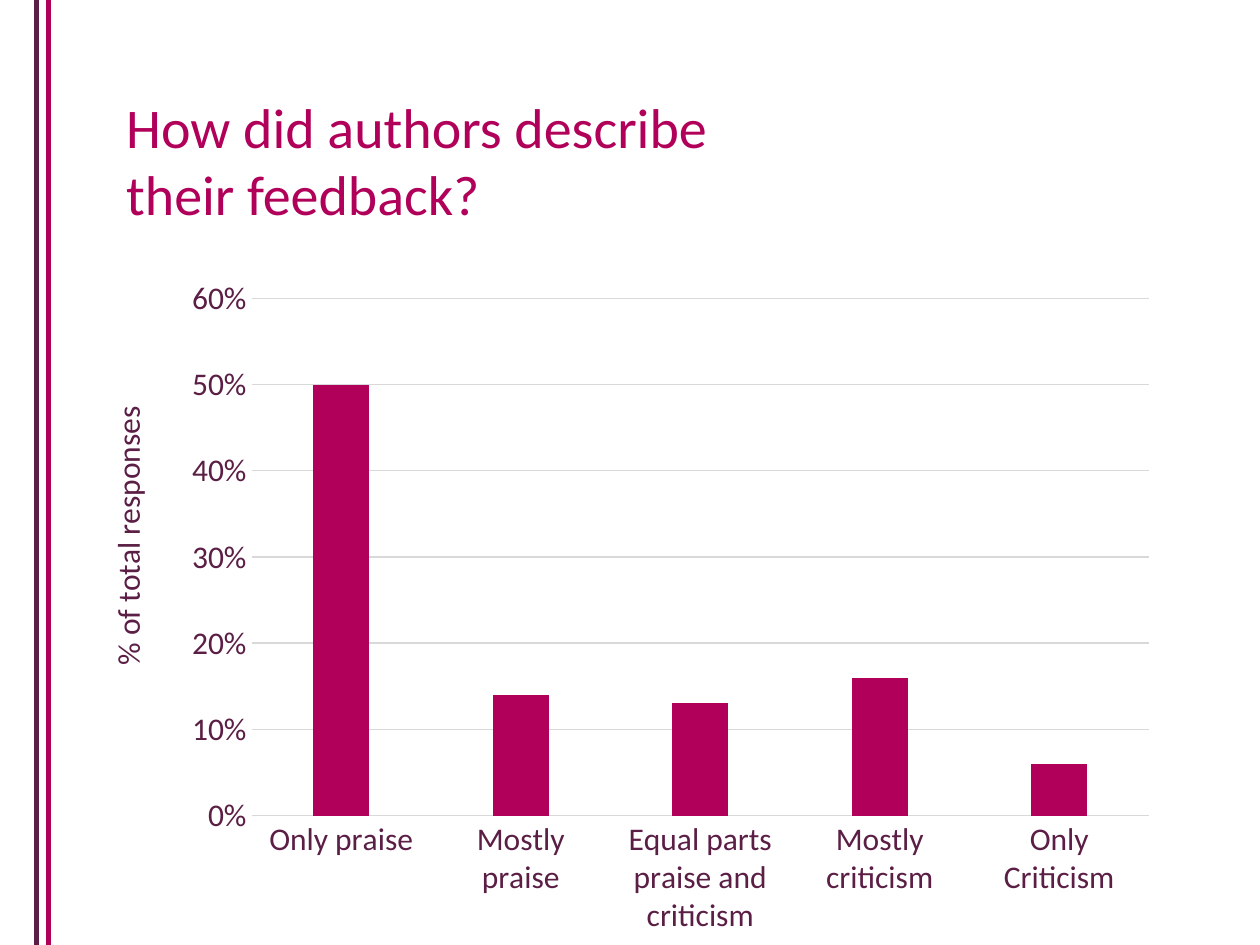
from lxml import etree
from pptx import Presentation
from pptx.chart.data import CategoryChartData
from pptx.dml.color import RGBColor
from pptx.enum.chart import XL_CHART_TYPE as ChartType, XL_TICK_MARK as TickMark
from pptx.enum.dml import MSO_FILL
from pptx.enum.shapes import MSO_CONNECTOR as Connector
from pptx.enum.text import MSO_ANCHOR as Anchor, PP_ALIGN as Align
from pptx.oxml.ns import qn
from pptx.util import Cm, Pt

PLUM, MAGENTA, GREY = "5B1E45", "B10059", "D9D9D9"
FONT = "Calibri"
FEEDBACK = {
    "Only praise": 0.5,
    "Mostly praise": 0.14,
    "Equal parts praise and criticism": 0.13,
    "Mostly criticism": 0.16,
    "Only Criticism": 0.06,
}


def color(value):
    return RGBColor.from_string(value)


def style_font(font, size, value):
    font.name, font.size, font.bold = FONT, Pt(size), False
    font.color.rgb = color(value)


def style_line(line, value, width):
    line.fill.solid()
    line.fill.fore_color.rgb = color(value)
    line.width = Pt(width)


def set_layout(parent, **settings):
    """Place a chart part by fractions of the chart area."""
    layout = parent.find(qn("c:layout"))
    if layout is None:
        layout = etree.Element(qn("c:layout"))
        parent.insert(0, layout)
    manual = etree.SubElement(layout, qn("c:manualLayout"))
    for name, value in settings.items():
        etree.SubElement(manual, qn(f"c:{name}")).set("val", str(value))


def add_side_rules(page, left, top, gap, height):
    for index, value in enumerate((PLUM, MAGENTA)):
        x = left + index * gap
        rule = page.shapes.add_connector(Connector.STRAIGHT, x, top, x, top + height)
        style_line(rule.line, value, 3)
        etree.SubElement(rule.element.spPr, qn("a:effectLst"))


def add_title(page, left, top, width, height):
    title = page.shapes.title
    title.left, title.top, title.width, title.height = left, top, width, height
    frame = title.text_frame
    frame.text = "How did authors describe their feedback?"
    frame.word_wrap = True
    frame.vertical_anchor = Anchor.TOP
    para = frame.paragraphs[0]
    para.alignment = Align.LEFT
    style_font(para.font, 32, MAGENTA)


def add_feedback_chart(page, left, top, width, height):
    data = CategoryChartData(number_format="0%")
    data.categories = list(FEEDBACK)
    data.add_series("Series 1", list(FEEDBACK.values()))
    chart = page.shapes.add_chart(
        ChartType.COLUMN_CLUSTERED, left, top, width, height, data).chart
    chart.has_title = chart.has_legend = False
    style_font(chart.font, 18, PLUM)

    # Columns
    plot = chart.plots[0]
    plot.gap_width, plot.overlap, plot.vary_by_categories = 219, -27, False
    fill = plot.series[0].format.fill
    fill.solid()
    fill.fore_color.rgb = color(MAGENTA)

    # Axes
    categories, values = chart.category_axis, chart.value_axis
    for axis in (categories, values):
        axis.major_tick_mark = axis.minor_tick_mark = TickMark.NONE
        style_font(axis.tick_labels.font, 18, PLUM)
    style_line(categories.format.line, GREY, 0.75)
    values.format.line.fill.background()
    values.minimum_scale, values.maximum_scale, values.major_unit = 0, 0.6, 0.1
    values.tick_labels.number_format = "0%"
    values.tick_labels.number_format_is_linked = False
    style_line(values.major_gridlines.format.line, GREY, 0.75)

    # Value axis title, reading upwards
    frame = values.axis_title.text_frame
    frame.text = "% of total responses"
    style_font(frame.paragraphs[0].font, 18, PLUM)
    body = values.axis_title._element.find(".//" + qn("a:bodyPr"))
    body.set("rot", "-5400000")
    body.set("vert", "horz")
    set_layout(values.axis_title._element, xMode="edge", yMode="edge", x=0.01, y=0.2)

    # Plot area
    plot_area = chart._chartSpace.find(".//" + qn("c:plotArea"))
    set_layout(plot_area, layoutTarget="inner", xMode="edge", yMode="edge",
               x=0.15, y=0.05, w=0.83, h=0.76)


def main():
    deck = Presentation()
    deck.slide_width, deck.slide_height = Cm(25.4), Cm(19.05)
    page = deck.slides.add_slide(deck.slide_layouts[5])
    page.background.fill.solid()
    page.background.fill.fore_color.rgb = color("FFFFFF")
    add_side_rules(page, Cm(0.74), 0, Cm(0.24), deck.slide_height)
    add_title(page, Cm(2.29), Cm(1.73), Cm(12.9), Cm(3))
    add_feedback_chart(page, Cm(1.8), Cm(5.33), Cm(21.8), Cm(13.72))
    deck.save("out.pptx")


if __name__ == "__main__":
    main()
